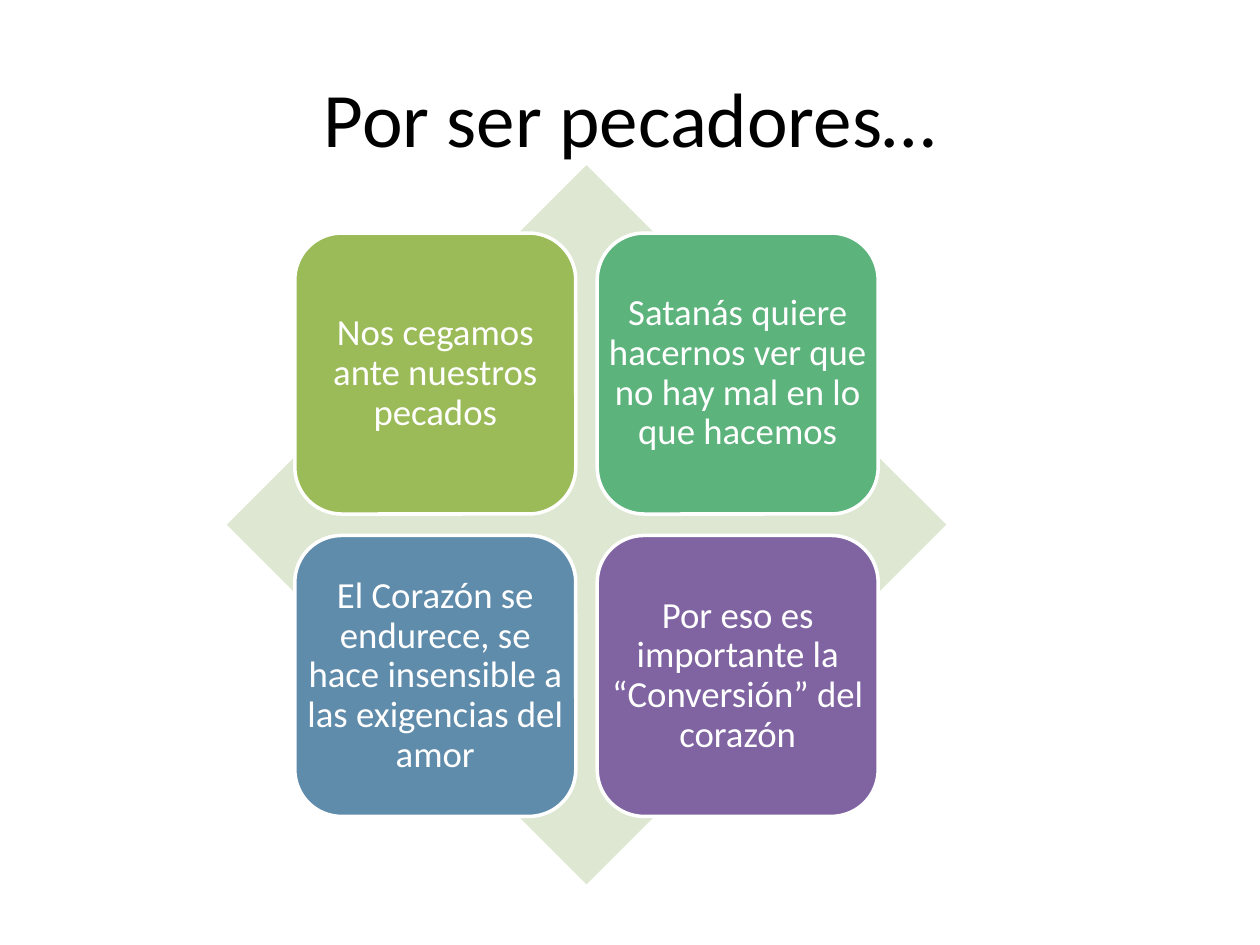
from pptx import Presentation
from pptx.dml.color import RGBColor
from pptx.enum.shapes import MSO_SHAPE
from pptx.enum.text import MSO_ANCHOR, PP_ALIGN
from pptx.util import Inches, Pt

FONT = "Calibri"
WHITE = "FFFFFF"
DIAMOND_LEFT, DIAMOND_TOP, DIAMOND_SIZE = 1.8, 1.31, 5.71
CARD_SIZE, CARD_PITCH, CARD_INSET = 2.23, 2.4, 0.54
CARDS = [
    ("Nos cegamos ante nuestros pecados", "9BBB59"),
    ("Satanás quiere hacernos ver que no hay mal en lo que hacemos", "5CB37C"),
    ("El Corazón se endurece, se hace insensible a las exigencias del amor", "608CAB"),
    ("Por eso es importante la “Conversión” del corazón", "8064A2"),
]
TITLE_FORMAT = {"alignment": PP_ALIGN.CENTER}
CARD_FORMAT = {"alignment": PP_ALIGN.CENTER, "line_spacing": 0.9}


def color(value):
    return RGBColor.from_string(value)


def set_values(target, values):
    for name, value in values.items():
        setattr(target, name, value)


def add_filled_shape(slide, kind, box, fill, outline=None):
    shape = slide.shapes.add_shape(kind, *map(Inches, box))
    shape.shadow.inherit = False
    shape.fill.solid()
    shape.fill.fore_color.rgb = color(fill)
    if outline:
        shape.line.color.rgb = color(outline)
        shape.line.width = Pt(2)
    else:
        shape.line.fill.background()


def add_text(slide, box, text, size, text_color, margin, paragraph_format):
    frame = slide.shapes.add_textbox(*map(Inches, box)).text_frame
    set_values(frame, {"word_wrap": True, "vertical_anchor": MSO_ANCHOR.MIDDLE})
    for side in ("left", "right", "top", "bottom"):
        setattr(frame, f"margin_{side}", Inches(margin))
    paragraph = frame.paragraphs[0]
    set_values(paragraph, paragraph_format)
    run = paragraph.add_run()
    run.text = text
    set_values(run.font, {"name": FONT, "size": Pt(size)})
    run.font.color.rgb = color(text_color)


def add_card(slide, index, text, fill):
    row, column = divmod(index, 2)
    box = (DIAMOND_LEFT + CARD_INSET + column * CARD_PITCH,
           DIAMOND_TOP + CARD_INSET + row * CARD_PITCH,
           CARD_SIZE, CARD_SIZE)
    add_filled_shape(slide, MSO_SHAPE.ROUNDED_RECTANGLE, box, fill, WHITE)
    add_text(slide, box, text, 21, WHITE, 0.09, CARD_FORMAT)


def main():
    presentation = Presentation()
    set_values(presentation, {"slide_width": Inches(10), "slide_height": Inches(7.5)})
    slide = presentation.slides.add_slide(presentation.slide_layouts[6])
    add_text(slide, (0.5, 0.3, 9, 1.25), "Por ser pecadores…", 44, "000000", 0.1, TITLE_FORMAT)
    add_filled_shape(slide, MSO_SHAPE.DIAMOND,
                     (DIAMOND_LEFT, DIAMOND_TOP, DIAMOND_SIZE, DIAMOND_SIZE), "DEE7D1")
    for index, (text, fill) in enumerate(CARDS):
        add_card(slide, index, text, fill)
    presentation.save("out.pptx")


if __name__ == "__main__":
    main()
